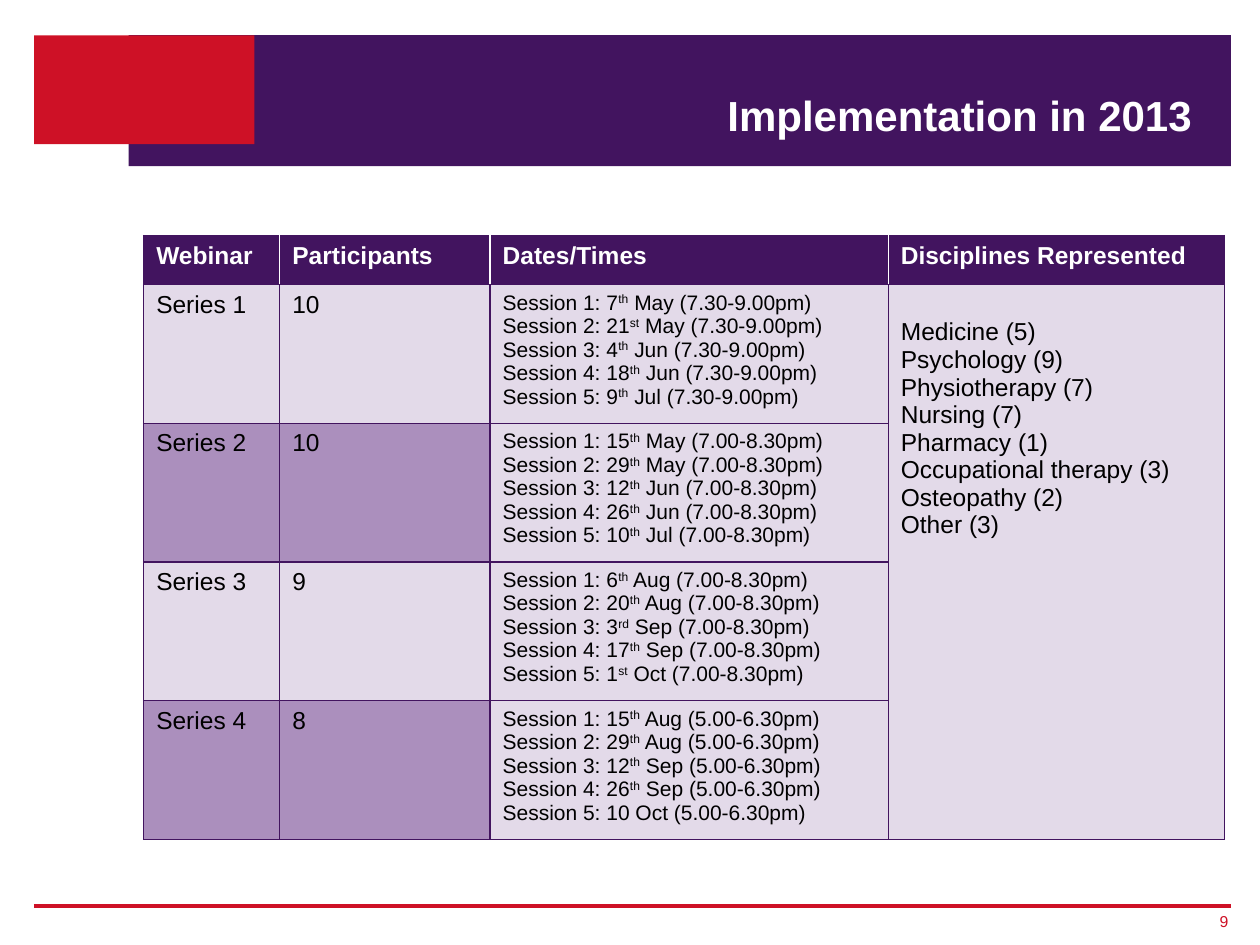
from lxml.etree import SubElement as Sub
from pptx import Presentation
from pptx.dml.color import RGBColor
from pptx.enum.shapes import MSO_CONNECTOR as Line, MSO_SHAPE as Shape
from pptx.enum.text import MSO_ANCHOR as Anchor, PP_ALIGN as Align
from pptx.oxml.ns import qn
from pptx.util import Inches, Pt

HUE = {"plum": "42145F", "red": "CE1126", "pale": "E3DAE9",
       "mauve": "AB8FBD", "white": "FFFFFF", "black": "000000"}
HEADS = ["Webinar", "Participants", "Dates/Times", "Disciplines Represented"]
SERIES = [
    ("10", "7.30-9.00pm", ["7th May", "21st May", "4th Jun", "18th Jun", "9th Jul"]),
    ("10", "7.00-8.30pm", ["15th May", "29th May", "12th Jun", "26th Jun", "10th Jul"]),
    ("9", "7.00-8.30pm", ["6th Aug", "20th Aug", "3rd Sep", "17th Sep", "1st Oct"]),
    ("8", "5.00-6.30pm", ["15th Aug", "29th Aug", "12th Sep", "26th Sep", "10 Oct"]),
]
FIELDS = ["Medicine (5)", "Psychology (9)", "Physiotherapy (7)", "Nursing (7)",
          "Pharmacy (1)", "Occupational therapy (3)", "Osteopathy (2)", "Other (3)"]
COLS = [1.08, 1.67, 3.16, 2.67]
ROWS = [0.39, 1.03, 1.03, 1.03, 1.09]


def tint(name):
    """Return the named colour."""
    return RGBColor.from_string(HUE[name])


def style(frame, size, color, bold=False):
    """Format every run of a text frame."""
    for para in frame.paragraphs:
        for run in para.runs:
            font = run.font
            font.name, font.size, font.bold = "Arial", Pt(size), bold
            font.color.rgb = tint(color)


def block(slide, box, color):
    """Draw a plain filled rectangle."""
    shape = slide.shapes.add_shape(Shape.RECTANGLE, *map(Inches, box))
    shape.shadow.inherit = False
    shape.fill.solid()
    shape.fill.fore_color.rgb = tint(color)
    shape.line.fill.background()


def header(slide, box):
    """Draw the band with its red corner and the title."""
    left, top, width, height = box
    block(slide, box, "plum")
    block(slide, (left - 0.75, top, width * 0.2, height * 0.83), "red")
    title = slide.shapes.title
    title.left, title.top = Inches(left + 1.03), Inches(top + 0.19)
    title.width, title.height = Inches(width - 1.05), Inches(0.69)
    frame = title.text_frame
    frame.text = "Implementation in 2013"
    frame.vertical_anchor = Anchor.BOTTOM
    frame.margin_right = Inches(0.29)
    para = frame.paragraphs[0]
    para.alignment, para.line_spacing = Align.RIGHT, Pt(25)
    style(frame, 24, "white", True)


def footer(slide, box):
    """Draw the rule and the page number below it."""
    left, top, width, height = box
    rule = slide.shapes.add_connector(
        Line.STRAIGHT, *map(Inches, (left, top, left + width, top)))
    rule.line.color.rgb, rule.line.width = tint("red"), Pt(2.25)
    Sub(rule._element.spPr, qn("a:effectLst"))
    page = slide.shapes.add_textbox(
        *map(Inches, (left + width - 0.29, top + 0.01, 0.27, height)))
    frame = page.text_frame
    frame.word_wrap = True
    frame.margin_left = frame.margin_right = frame.margin_top = frame.margin_bottom = 0
    frame.vertical_anchor = Anchor.MIDDLE
    frame.text = "9"
    frame.paragraphs[0].alignment = Align.RIGHT
    style(frame, 9, "red")


def edge(cell, sides):
    """Give a cell one-point borders, as colours by side."""
    props = cell._tc.get_or_add_tcPr()
    for side in "LRTB":
        line = Sub(props, qn(f"a:ln{side}"), w=str(Pt(1)))
        fill = Sub(line, qn("a:solidFill"))
        Sub(fill, qn("a:srgbClr"), val=HUE[sides.get(side, "plum")])


def paint(cell, color):
    """Fill a cell."""
    cell.fill.solid()
    cell.fill.fore_color.rgb = tint(color)


def dates(frame, days, hours):
    """List the sessions with raised day endings."""
    for num, date in enumerate(days, 1):
        para = frame.paragraphs[0] if num == 1 else frame.add_paragraph()
        day, month = date.split()
        digits = day.rstrip("dhnrst")
        parts = [f"Session {num}: {digits}", day[len(digits):], f" {month} ({hours})"]
        for part in filter(None, parts):
            run = para.add_run()
            run.text = part
            if part == parts[1]:
                run._r.get_or_add_rPr().set("baseline", "30000")
    style(frame, 12, "black")


def table(slide, left, top):
    """Build the table of webinar series."""
    box = map(Inches, (left, top, sum(COLS), sum(ROWS)))
    grid = slide.shapes.add_table(len(ROWS), len(COLS), *box).table
    for col, width in zip(grid.columns, COLS):
        col.width = Inches(width)
    for row, height in zip(grid.rows, ROWS):
        row.height = Inches(height)
    last = len(COLS) - 1
    for c, head in enumerate(HEADS):
        cell = grid.cell(0, c)
        cell.text = head
        style(cell.text_frame, 14, "white", True)
        edge(cell, {"L": "white" if c else "plum",
                    "R": "white" if c < last else "plum"})
        paint(cell, "plum")
    for r, (count, hours, days) in enumerate(SERIES, 1):
        for c in range(len(COLS)):
            cell = grid.cell(r, c)
            edge(cell, {})
            paint(cell, "mauve" if c < 2 and r % 2 == 0 else "pale")
        for c, text in enumerate([f"Series {r}", count]):
            cell = grid.cell(r, c)
            cell.text = text
            style(cell.text_frame, 14, "black")
        dates(grid.cell(r, 2).text_frame, days, hours)
    cell = grid.cell(1, last)
    cell.merge(grid.cell(len(SERIES), last))
    cell.text = "\n".join(FIELDS)
    cell.margin_top = Inches(0.27)
    style(cell.text_frame, 14, "black")


def main():
    """Build and save the slide."""
    deck = Presentation()
    deck.slide_width, deck.slide_height = Inches(10), Inches(7.5)
    slide = deck.slides.add_slide(deck.slide_layouts[5])
    header(slide, (1.02, 0.28, 8.75, 1.04))
    tree = slide.shapes._spTree
    tree.append(slide.shapes.title._element)
    footer(slide, (0.27, 7.19, 9.5, 0.23))
    table(slide, 1.14, 1.87)
    deck.save("out.pptx")


if __name__ == "__main__":
    main()
